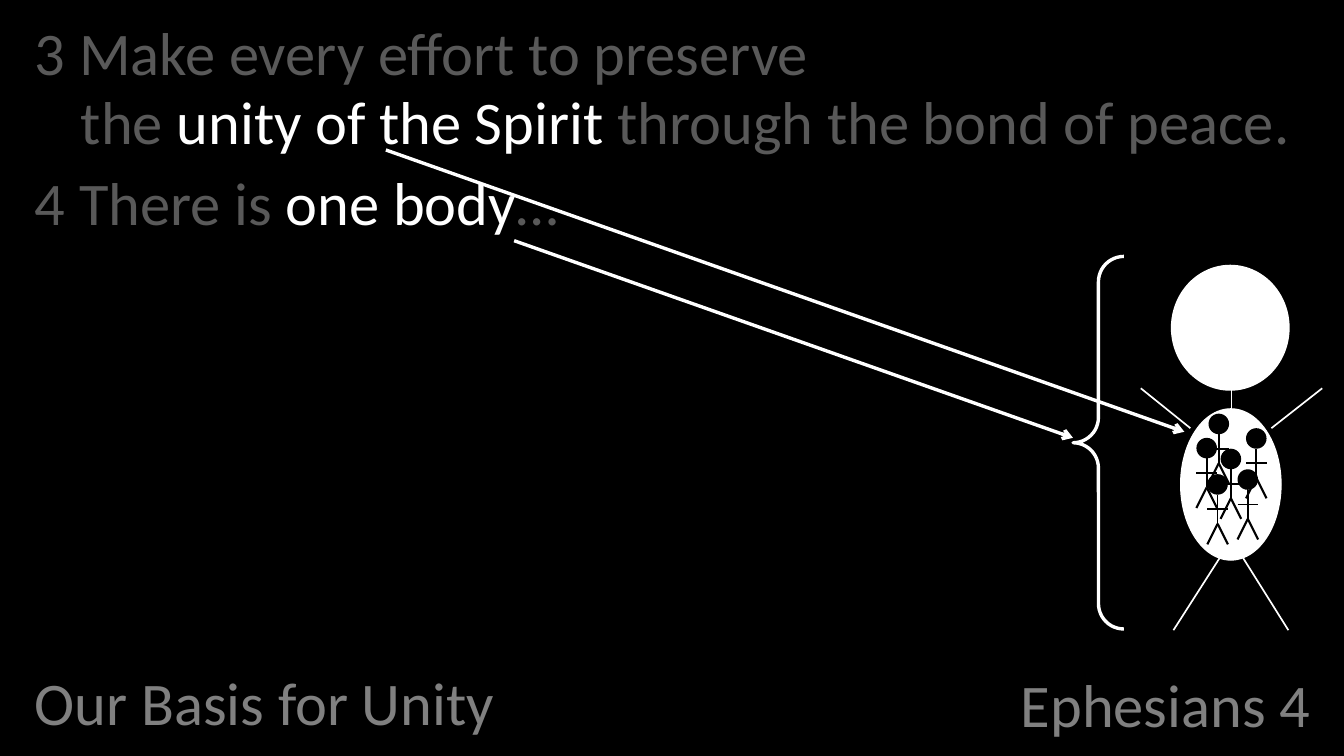
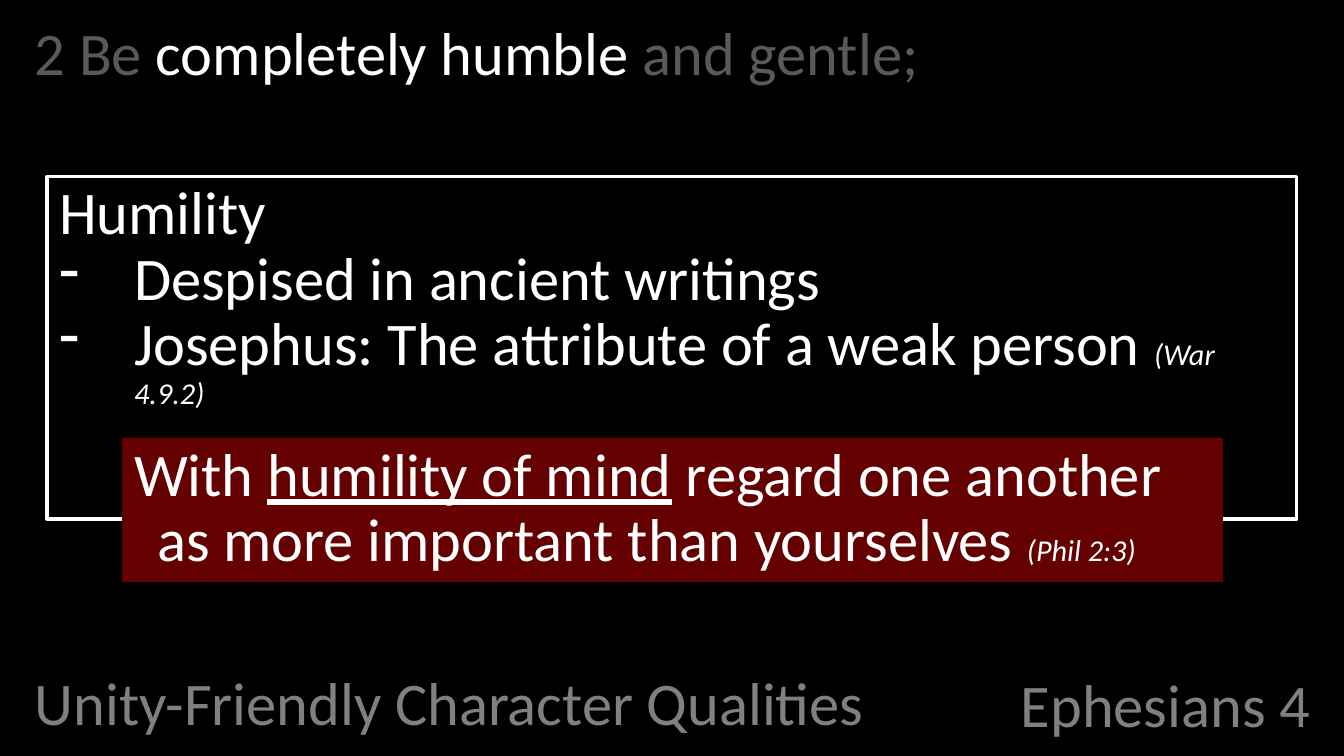
import pptx
import pptx.util
import pptx.dml.color
import pptx.enum.shapes
import pptx.enum.text
import pptx.oxml.ns
import lxml.etree

Inches, Pt = pptx.util.Inches, pptx.util.Pt
RGBColor = pptx.dml.color.RGBColor
SHAPE = pptx.enum.shapes.MSO_SHAPE
ANCHOR = pptx.enum.text.MSO_ANCHOR
ALIGN = pptx.enum.text.PP_ALIGN
qn = pptx.oxml.ns.qn

BLACK = RGBColor(0x00, 0x00, 0x00)
WHITE = RGBColor(0xFF, 0xFF, 0xFF)
DIM = RGBColor(0x59, 0x59, 0x59)
GRAY = RGBColor(0x80, 0x80, 0x80)
MAROON = RGBColor(0x64, 0x00, 0x00)
FONT = "Calibri"
CITE = {"size": 18, "italic": True}

BOOK = "Ephesians 4"
UNITY_TOPIC = "Our Basis for Unity"
UNITY_VERSES = [
    [("3 Make every effort to preserve \nthe ", DIM), ("unity of the Spirit", WHITE),
     (" through the bond of peace.", DIM)],
    [("4 There is ", DIM), ("one body", WHITE), ("…", DIM)],
]
HUMBLE_TOPIC = "Unity-Friendly Character Qualities"
HUMBLE_VERSES = [
    [("2 Be ", DIM), ("completely humble ", WHITE), ("and gentle;", DIM)],
]
HUMILITY_TITLE = [("Humility", WHITE)]
HUMILITY_POINTS = [
    [("Despised in ancient writings", WHITE)],
    [("Josephus: The attribute of a weak person ", WHITE), ("(War 4.9.2)", WHITE, CITE)],
]
QUOTE = [
    ("With ", WHITE), ("humility of mind", WHITE, {"underline": True}),
    (" regard one another as more important than yourselves ", WHITE),
    ("(Phil 2:3)", WHITE, CITE),
]

BODY_LIMBS = [
    (10.18, 3.21, 10.18, 4.46),
    (10.18, 4.46, 10.65, 5.21),
    (10.18, 4.46, 9.7, 5.21),
    (9.43, 3.21, 9.84, 3.54),
    (10.93, 3.21, 10.51, 3.54),
]
MEMBERS = [(10.09, 3.71), (10.3, 3.54), (9.89, 3.62), (10.23, 3.88), (9.98, 3.92), (9.99, 3.42)]
HEAD = 0.17


def add_run(p, text, color, size=36, italic=None, underline=None):
    for i, piece in enumerate(text.split("\n")):
        if i:
            p.add_line_break()
        r = p.add_run()
        r.text = piece
        r.font.name = FONT
        r.font.size = Pt(size)
        r.font.color.rgb = color
        r.font.italic = italic
        r.font.underline = underline


def add_paragraph(tf, runs, spacing, indent=0, before=0, align=ALIGN.LEFT, bullet=None):
    first = tf.paragraphs[0]
    p = tf.add_paragraph() if first.runs else first
    p.alignment = align
    p.line_spacing = spacing
    p.space_before = Pt(before)
    pPr = p._p.get_or_add_pPr()
    pPr.set("marL", str(Inches(indent)))
    pPr.set("indent", str(-Inches(indent)))
    if bullet:
        lxml.etree.SubElement(pPr, qn("a:buChar")).set("char", bullet)
    for text, color, *style in runs:
        add_run(p, text, color, **(style[0] if style else {}))


def add_text(s, left, top, width, height, anchor):
    tf = s.shapes.add_textbox(Inches(left), Inches(top), Inches(width), Inches(height)).text_frame
    tf.word_wrap = True
    tf.vertical_anchor = anchor
    return tf


def add_shape(shapes, kind, left, top, width, height, fill=None, line=None, weight=1):
    sp = shapes.add_shape(kind, Inches(left), Inches(top), Inches(width), Inches(height))
    sp.shadow.inherit = False
    if fill is None:
        sp.fill.background()
    else:
        sp.fill.solid()
        sp.fill.fore_color.rgb = fill
    if line is None:
        sp.line.fill.background()
    else:
        sp.line.color.rgb = line
        sp.line.width = Pt(weight)
    return sp


def add_line(shapes, x1, y1, x2, y2, color, weight=1, arrow=False):
    line = shapes.add_connector(pptx.enum.shapes.MSO_CONNECTOR.STRAIGHT,
                                Inches(x1), Inches(y1), Inches(x2), Inches(y2))
    line.line.color.rgb = color
    line.line.width = Pt(weight)
    if arrow:
        lxml.etree.SubElement(line.line._get_or_add_ln(), qn("a:tailEnd")).set("type", "arrow")
    lxml.etree.SubElement(line._element.spPr, qn("a:effectLst"))


def add_panel(s, left, top, width, height, fill, line=None):
    sp = add_shape(s.shapes, SHAPE.ROUNDED_RECTANGLE, left, top, width, height, fill, line, 2)
    sp.adjustments[0] = 0
    tf = sp.text_frame
    tf.word_wrap = True
    tf.vertical_anchor = ANCHOR.TOP
    return tf


def add_verse_slide(prs, topic, verses):
    s = prs.slides.add_slide(prs.slide_layouts[6])
    s.background.fill.solid()
    s.background.fill.fore_color.rgb = BLACK
    tf = add_text(s, 7.06, 5.56, 3.87, 0.6, ANCHOR.BOTTOM)
    add_paragraph(tf, [(BOOK, GRAY)], 0.8, align=ALIGN.RIGHT)
    tf = add_text(s, 0.19, 0.12, 10.74, 5.29, ANCHOR.TOP)
    for verse in verses:
        add_paragraph(tf, verse, 0.95, 0.38, 7.2)
    tf = add_text(s, 0.19, 5.56, 8.12, 0.6, ANCHOR.BOTTOM)
    add_paragraph(tf, [(topic, GRAY)], 0.95, 0.38, 7.2)
    return s


def add_body(s):
    shapes = s.shapes.add_group_shape().shapes
    add_shape(shapes, SHAPE.OVAL, 9.7, 2.21, 0.94, 1, WHITE, WHITE, 3)
    for limb in BODY_LIMBS:
        add_line(shapes, *limb, WHITE)
    add_shape(shapes, SHAPE.OVAL, 9.76, 3.38, 0.83, 1.25, WHITE, WHITE, 0.75)


def add_member(s, left, top):
    shapes = s.shapes.add_group_shape().shapes
    middle, right = left + HEAD / 2, left + HEAD
    neck, arms, hips, feet = (top + d for d in (HEAD, 0.29, 0.41, 0.58))
    add_shape(shapes, SHAPE.OVAL, left, top, HEAD, HEAD, BLACK)
    add_line(shapes, middle, neck, middle, hips, BLACK)
    for foot in (right, left):
        add_line(shapes, middle, hips, foot, feet, BLACK, 1.25)
    add_line(shapes, left, arms, right, arms, BLACK)


def main():
    prs = pptx.Presentation()
    prs.slide_width, prs.slide_height = Inches(11.11), Inches(6.25)

    s = add_verse_slide(prs, UNITY_TOPIC, UNITY_VERSES)
    add_body(s)
    for left, top in MEMBERS:
        add_member(s, left, top)
    add_line(s.shapes, 4.25, 1.99, 8.87, 3.62, WHITE, 2, True)
    brace = add_shape(s.shapes, SHAPE.LEFT_BRACE, 8.87, 2.12, 0.42, 3.08, line=WHITE, weight=2)
    brace.adjustments[0] = 0.5
    add_line(s.shapes, 3.19, 1.24, 9.79, 3.57, WHITE, 2, True)

    s = add_verse_slide(prs, HUMBLE_TOPIC, HUMBLE_VERSES)
    tf = add_panel(s, 0.39, 1.46, 10.33, 2.83, BLACK, WHITE)
    add_paragraph(tf, HUMILITY_TITLE, 0.9, 0.19)
    for point in HUMILITY_POINTS:
        add_paragraph(tf, point, 0.9, 0.62, bullet="-")
    tf = add_panel(s, 1.01, 3.62, 9.1, 1.19, MAROON)
    add_paragraph(tf, QUOTE, 0.9, 0.19)

    prs.save("out.pptx")


if __name__ == "__main__":
    main()
